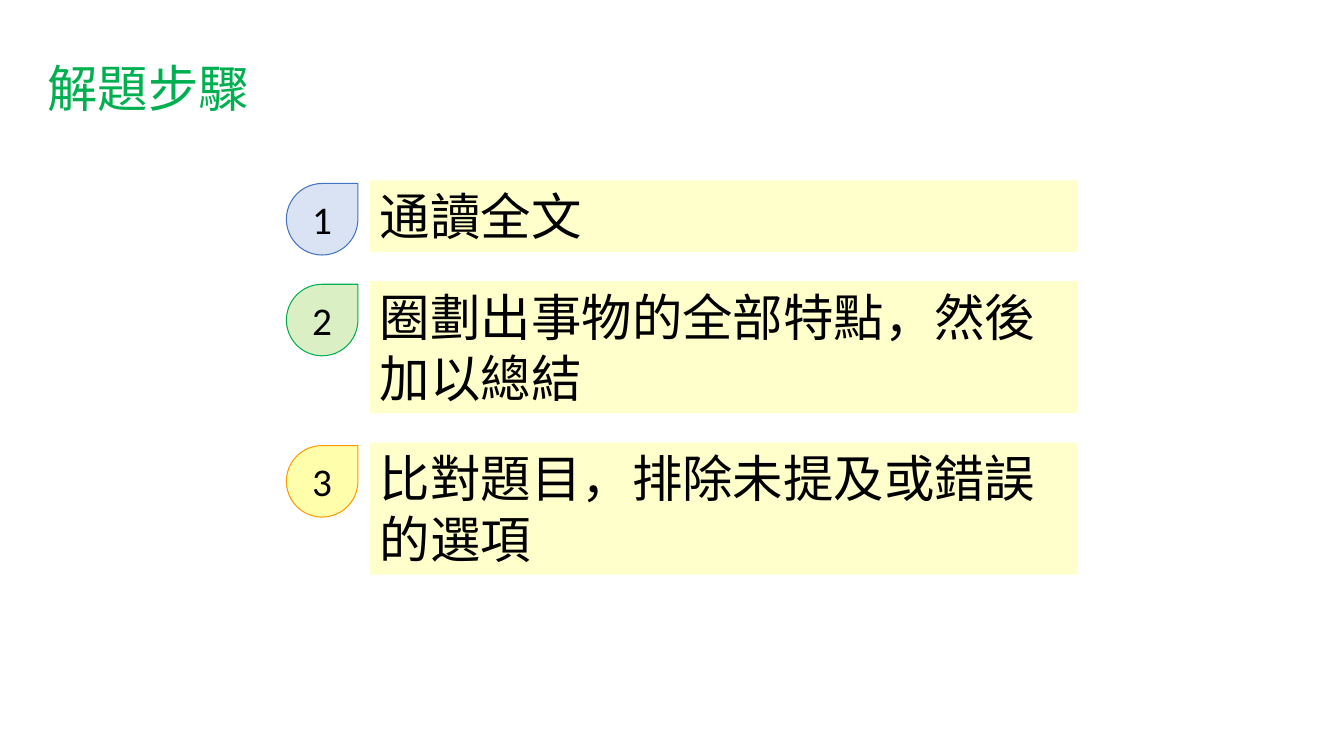
from lxml.etree import SubElement
from pptx import Presentation
from pptx.dml.color import RGBColor
from pptx.enum.shapes import MSO_SHAPE
from pptx.enum.text import MSO_ANCHOR, PP_ALIGN
from pptx.oxml.ns import qn
from pptx.util import Inches, Pt

BLACK = RGBColor(0x00, 0x00, 0x00)
GREEN = RGBColor(0x00, 0xB0, 0x50)
CREAM = RGBColor(0xFF, 0xFF, 0xCC)
BLUE = RGBColor(0x44, 0x72, 0xC4)
PALE_BLUE = RGBColor(0x8F, 0xAA, 0xDC)
LIME = RGBColor(0x92, 0xD0, 0x50)
YELLOW = RGBColor(0xFF, 0xFF, 0x00)
ORANGE = RGBColor(0xFF, 0x99, 0x00)

STEPS = [
    ("通讀全文", 1, PALE_BLUE, BLUE),
    ("圈劃出事物的全部特點，然後加以總結", 2, LIME, GREEN),
    ("比對題目，排除未提及或錯誤的選項", 2, YELLOW, ORANGE),
]
MARKER_SIZE = 0.71
LINE_HEIGHT = 0.6
PADDING = 0.11
STEP_GAP = 0.29


def write_text(shape, text, size=36, font="Roboto", color=BLACK,
               align=PP_ALIGN.LEFT, anchor=MSO_ANCHOR.TOP, wrap=True):
    """Fill a shape with one formatted paragraph."""
    frame = shape.text_frame
    frame.word_wrap = wrap
    frame.vertical_anchor = anchor
    para = frame.paragraphs[0]
    para.alignment = align
    span = para.add_run()
    span.text = text
    span.font.size = Pt(size)
    span.font.name = font
    span.font.color.rgb = color
    SubElement(span.font._element, qn("a:ea"), typeface=font)


def add_filled(page, preset, left, top, width, height, fill):
    """Add a flat preset shape with a solid fill and no outline."""
    shape = page.shapes.add_shape(
        preset, Inches(left), Inches(top), Inches(width), Inches(height))
    shape.shadow.inherit = False
    shape.fill.solid()
    shape.fill.fore_color.rgb = fill
    shape.line.fill.background()
    return shape


def add_title(page, left, top, width, height):
    """Place the slide heading in the title placeholder."""
    title = page.shapes.title
    title.left, title.top = Inches(left), Inches(top)
    title.width, title.height = Inches(width), Inches(height)
    write_text(title, "解題步驟", font="Noto Sans CJK SC", color=GREEN, wrap=False)


def add_marker(page, left, top, number, fill, outline):
    """Draw a numbered, translucent teardrop."""
    marker = add_filled(page, MSO_SHAPE.TEAR, left, top, MARKER_SIZE, MARKER_SIZE, fill)
    color = marker.fill._xPr.find(qn("a:solidFill"))[0]
    SubElement(color, qn("a:alpha"), val="33000")
    marker.line.color.rgb = outline
    marker.line.width = Pt(0.75)
    write_text(marker, str(number), size=28, font="Calibri",
               align=PP_ALIGN.CENTER, anchor=MSO_ANCHOR.MIDDLE)


def add_steps(page, left, top, width):
    """Stack the numbered steps, each as tall as its lines of text."""
    indent = MARKER_SIZE + 0.12
    for number, (text, lines, fill, outline) in enumerate(STEPS, start=1):
        height = PADDING + lines * LINE_HEIGHT
        box = add_filled(page, MSO_SHAPE.RECTANGLE, left + indent, top,
                         width - indent, height, CREAM)
        write_text(box, text)
        add_marker(page, left, top + 0.03, number, fill, outline)
        top += height + STEP_GAP


def main():
    """Build and save the deck."""
    deck = Presentation()
    deck.slide_width, deck.slide_height = Inches(13.33), Inches(7.5)
    page = deck.slides.add_slide(deck.slide_layouts[5])
    add_title(page, 0.37, 0.52, 2.22, 0.71)
    add_steps(page, 2.84, 1.79, 7.84)
    deck.save("out.pptx")


if __name__ == "__main__":
    main()
